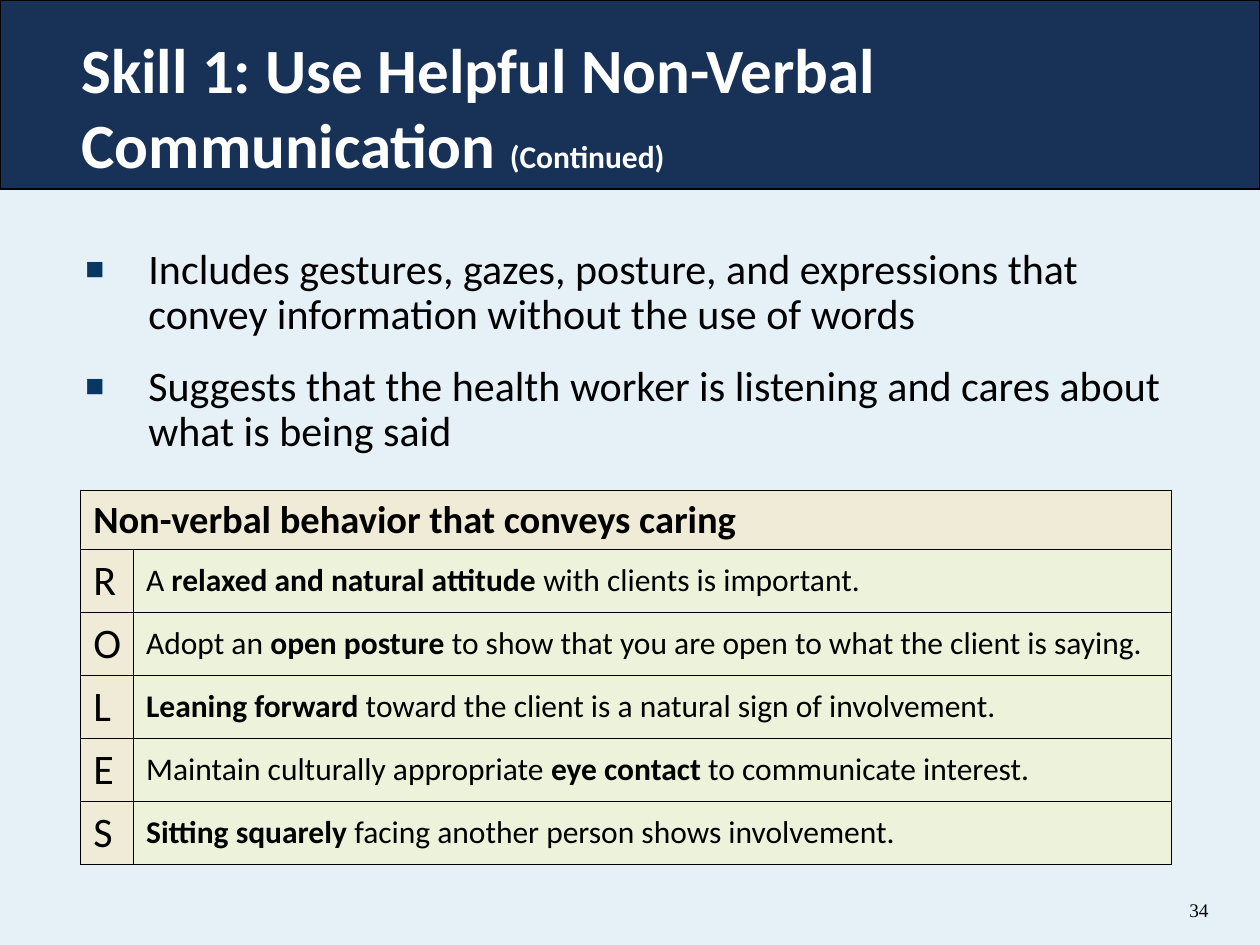
from lxml import etree
from pptx import Presentation, util as u
from pptx.dml.color import RGBColor
from pptx.enum import shapes, text
from pptx.oxml.ns import qn

FONT = "Calibri"
BLACK, WHITE = "000000", "FFFFFF"
NAVY, PALE_BLUE, BULLET_BLUE = "173157", "E5F0F7", "083763"
CREAM, PALE_GREEN = "F0EBD6", "EDF3DB"
WIDTH, HEIGHT = u.Inches(10), u.Inches(7.5)

BULLETS = [
    "Includes gestures, gazes, posture, and expressions that convey information without the use of words",
    "Suggests that the health worker is listening and cares about what is being said",
]
HEADING = "Non-verbal behavior that conveys caring"
# Letter, then plain, bold and plain parts of its sentence
ROLES = [
    ("R", "A ", "relaxed and natural attitude ", "with clients is important."),
    ("O", "Adopt an ", "open posture", " to show that you are open to what the client is saying."),
    ("L", "", "Leaning forward", " toward the client is a natural sign of involvement."),
    ("E", "Maintain culturally appropriate ", "eye contact", " to communicate interest."),
    ("S", "", "Sitting squarely", " facing another person shows involvement."),
]


def rgb(color):
    return RGBColor.from_string(color)


def add_run(p, words, size, color=BLACK, bold=False, font=FONT):
    r = p.add_run()
    r.text = words
    r.font.size, r.font.bold, r.font.name = u.Pt(size), bold, font
    r.font.color.rgb = rgb(color)


def add_text_box(s, left, top, width, height, anchor=text.MSO_ANCHOR.TOP):
    """Add a wrapping text box, placed in inches, and return its text frame."""
    tf = s.shapes.add_textbox(*map(u.Inches, (left, top, width, height))).text_frame
    tf.word_wrap = True
    tf.vertical_anchor = anchor
    return tf


def add_title(s):
    band = s.shapes.add_shape(shapes.MSO_SHAPE.RECTANGLE, 0, 0, WIDTH, int(HEIGHT * 0.2))
    band.shadow.inherit = False
    band.fill.solid()
    band.fill.fore_color.rgb = rgb(NAVY)
    band.line.color.rgb = rgb(BLACK)
    band.line.width = u.Pt(0.75)
    p = add_text_box(s, 0.55, 0.14, 9.04, 1.4, text.MSO_ANCHOR.MIDDLE).paragraphs[0]
    add_run(p, "Skill 1: Use Helpful Non-Verbal Communication ", 36, WHITE, True)
    add_run(p, "(Continued)", 18, WHITE, True)


def set_bullet(p):
    pPr = p._p.get_or_add_pPr()
    pPr.set("marL", str(u.Inches(0.5)))
    pPr.set("indent", str(-u.Inches(0.5)))
    color = etree.SubElement(pPr, qn("a:buClr"))
    etree.SubElement(color, qn("a:srgbClr"), val=BULLET_BLUE)
    etree.SubElement(pPr, qn("a:buSzPct"), val="75000")
    etree.SubElement(pPr, qn("a:buFont"), typeface="Arial")
    etree.SubElement(pPr, qn("a:buChar"), char="■")


def add_bullets(s):
    tf = add_text_box(s, 0.58, 1.92, 9, 1.9)
    for i, words in enumerate(BULLETS):
        p = tf.paragraphs[0] if i == 0 else tf.add_paragraph()
        p.line_spacing = 0.9
        p.space_before = u.Pt(15 if i else 5)
        set_bullet(p)
        add_run(p, words, 24)


def style_cell(cell, color):
    """Give a cell thin black borders and a plain fill."""
    tcPr = cell._tc.get_or_add_tcPr()
    for side in ("a:lnL", "a:lnR", "a:lnT", "a:lnB"):
        ln = etree.SubElement(tcPr, qn(side), w=str(u.Pt(0.5)))
        fill = etree.SubElement(ln, qn("a:solidFill"))
        etree.SubElement(fill, qn("a:srgbClr"), val=BLACK)
    cell.fill.solid()
    cell.fill.fore_color.rgb = rgb(color)
    cell.vertical_anchor = text.MSO_ANCHOR.MIDDLE


def add_roles_table(s):
    columns, rows = (0.42, 8.24), [0.47] + [0.5] * len(ROLES)
    size = map(u.Inches, (0.64, 3.89, sum(columns), sum(rows)))
    table = s.shapes.add_table(len(rows), len(columns), *size).table
    table.horz_banding = False
    for column, width in zip(table.columns, columns):
        column.width = u.Inches(width)
    for row, height in zip(table.rows, rows):
        row.height = u.Inches(height)
        for cell, color in zip(row.cells, (CREAM, PALE_GREEN)):
            style_cell(cell, color)

    heading = table.cell(0, 0)
    heading.merge(table.cell(0, 1))
    heading.vertical_anchor = text.MSO_ANCHOR.TOP
    add_run(heading.text_frame.paragraphs[0], HEADING, 22, bold=True)
    for i, (letter, *parts) in enumerate(ROLES, 1):
        add_run(table.cell(i, 0).text_frame.paragraphs[0], letter, 24)
        p = table.cell(i, 1).text_frame.paragraphs[0]
        for words, bold in zip(parts, (False, True, False)):
            if words:
                add_run(p, words, 18, bold=bold)


def add_page_number(s):
    p = add_text_box(s, 9.08, 7.02, 0.61, 0.4, text.MSO_ANCHOR.MIDDLE).paragraphs[0]
    p.alignment = text.PP_ALIGN.RIGHT
    add_run(p, "34", 11, font="Times New Roman")


def main():
    prs = Presentation()
    prs.slide_width, prs.slide_height = WIDTH, HEIGHT
    s = prs.slides.add_slide(prs.slide_layouts[6])
    s.background.fill.solid()
    s.background.fill.fore_color.rgb = rgb(PALE_BLUE)
    add_title(s)
    add_bullets(s)
    add_roles_table(s)
    add_page_number(s)
    prs.save("out.pptx")


if __name__ == "__main__":
    main()
